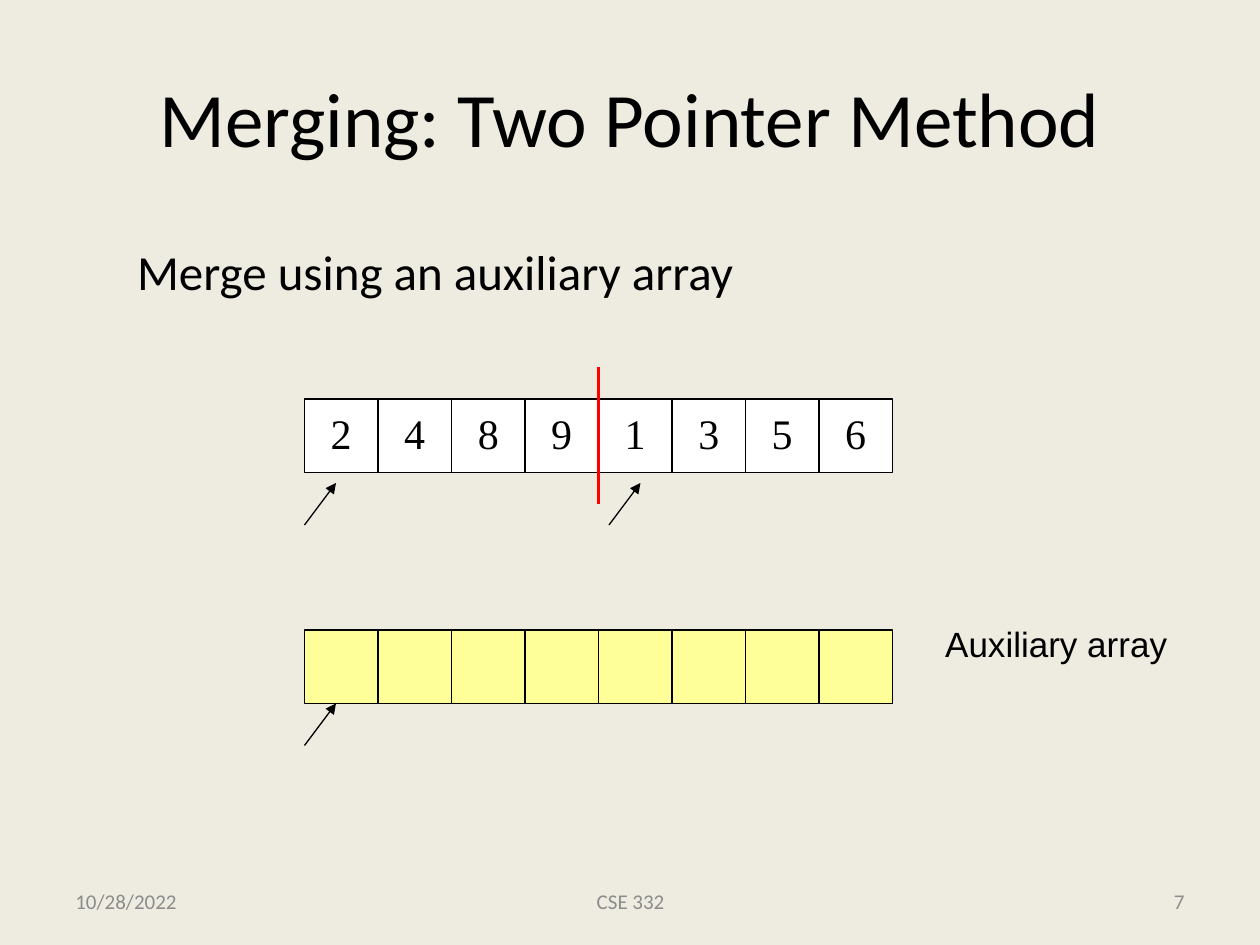
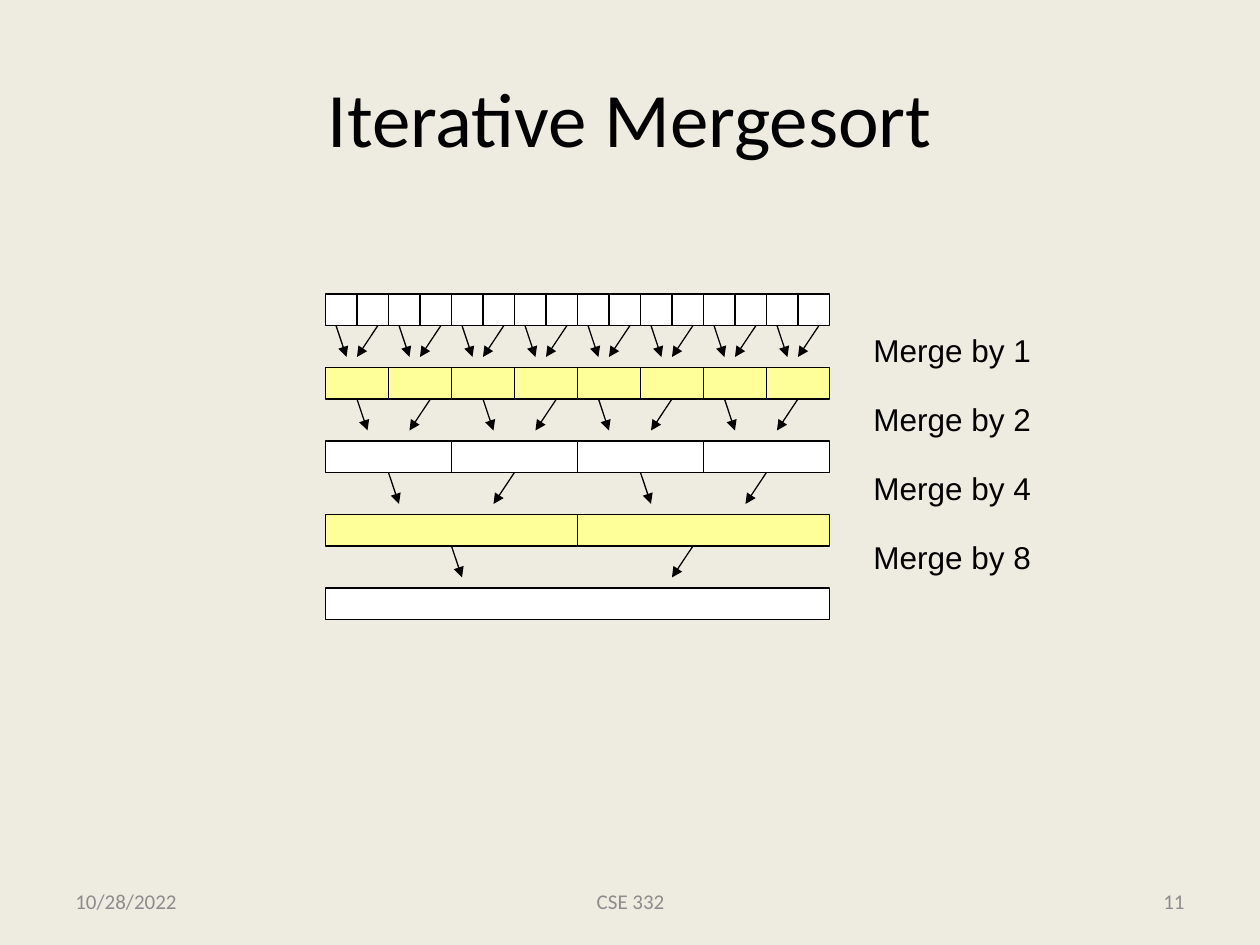
from lxml import etree
from pptx import Presentation
from pptx import util as u
from pptx.dml import color
from pptx.enum import shapes, text
from pptx.oxml import ns

PAPER = color.RGBColor(0xEE, 0xEC, 0xE1)
BLACK = color.RGBColor(0, 0, 0)
WHITE = color.RGBColor(0xFF, 0xFF, 0xFF)
YELLOW = color.RGBColor(0xFF, 0xFF, 0x99)
RED = color.RGBColor(0xFF, 0, 0)
GRAY = color.RGBColor(0x8C, 0x8C, 0x8C)
LEFT, MID, RIGHT = text.PP_ALIGN.LEFT, text.PP_ALIGN.CENTER, text.PP_ALIGN.RIGHT
UNIT = 1 / 12


def style(para, face, size, tint=BLACK, align=LEFT, pitch=None):
    """Set the font, alignment and line pitch of a paragraph."""
    para.font.name = face
    para.font.size = u.Pt(size)
    para.font.color.rgb = tint
    para.alignment = align
    para.line_spacing = pitch


def add_text(slide, box, lines, face, size, tint=BLACK, align=LEFT,
             pitch=None, gap=0, wrap=False, anchor=text.MSO_ANCHOR.TOP):
    """Add a text box with one paragraph for each line."""
    frame = slide.shapes.add_textbox(*map(u.Inches, box)).text_frame
    frame.word_wrap = wrap
    frame.vertical_anchor = anchor
    frame.text = "\n".join(lines)
    for i, para in enumerate(frame.paragraphs):
        style(para, face, size, tint, align, pitch)
        if i:
            para.space_before = u.Pt(gap)


def add_line(slide, start, end, tint=BLACK, width=0.75, head=True, cell=None):
    """Draw a line or arrow, joined to the cell if it starts at its lower middle."""
    ends = map(u.Inches, (*start, *end))
    line = slide.shapes.add_connector(shapes.MSO_CONNECTOR.STRAIGHT, *ends)
    if cell is not None:
        middle = cell.left + cell.width / 2
        if abs(middle - u.Inches(start[0])) < u.Inches(0.01):
            line.begin_connect(cell, 2)
    line.line.color.rgb = tint
    line.line.width = u.Pt(width)
    props = line.element.spPr
    if head:
        etree.SubElement(props.find(ns.qn("a:ln")), ns.qn("a:tailEnd"), type="triangle")
    etree.SubElement(props, ns.qn("a:effectLst"))


def add_row(slide, box, count, fill, labels=()):
    """Split a box into equal cells and return them."""
    left, top, width, height = box
    step = width / count
    cells = []
    for i in range(count):
        place = map(u.Inches, (left + i * step, top, step, height))
        cell = slide.shapes.add_shape(shapes.MSO_SHAPE.RECTANGLE, *place)
        cell.shadow.inherit = False
        cell.fill.solid()
        cell.fill.fore_color.rgb = fill
        cell.line.color.rgb = BLACK
        cell.line.width = u.Pt(0.75)
        cells.append(cell)
    for cell, label in zip(cells, labels):
        frame = cell.text_frame
        frame.word_wrap = False
        frame.vertical_anchor = text.MSO_ANCHOR.MIDDLE
        frame.text = label
        style(frame.paragraphs[0], "Times New Roman", 24, BLACK, MID, 0.9)
    return cells


def add_page(deck, title, number):
    """Add a slide with the shared title and footer."""
    slide = deck.slides.add_slide(deck.slide_layouts[5])
    head = slide.shapes.title
    head.left, head.top, head.width, head.height = map(u.Inches, (0.5, 0.3, 9, 1.25))
    head.text_frame.text = title
    head.text_frame.vertical_anchor = text.MSO_ANCHOR.MIDDLE
    style(head.text_frame.paragraphs[0], "Calibri", 44, BLACK, MID)
    footer = ((0.5, 2.33, "10/28/2022", LEFT), (3.42, 3.17, "CSE 332", MID),
              (7.17, 2.33, number, RIGHT))
    for left, width, words, align in footer:
        add_text(slide, (left, 6.95, width, 0.4), [words], "Calibri", 12, GRAY, align,
                 wrap=True, anchor=text.MSO_ANCHOR.MIDDLE)
    return slide


def add_source(slide, box, values):
    """Draw the two sorted halves, the bar between them and their pointers."""
    left, top, width, height = box
    add_row(slide, box, len(values), WHITE, values)
    center, base = left + width / 2, top + height
    add_line(slide, (center, top - 0.25), (center, base + 0.25), RED, 2.25, False)
    for x in (left, center + UNIT):
        add_line(slide, (x, base + 5 * UNIT), (x + 0.25, base + UNIT))


def add_target(slide, box, count):
    """Draw the empty array with its pointer and label."""
    left, top, width, height = box
    add_row(slide, box, count, YELLOW)
    base = top + height
    add_line(slide, (left, base + 4 * UNIT), (left + 0.25, base))
    add_text(slide, (left + width + 0.32, top - 0.07, 1.96, 0.43),
             ["Auxiliary array"], "Arial", 20, pitch=0.9)


def add_tree(slide, box):
    """Draw the merge levels, each with half the cells of the one above."""
    left, top, width, height = box
    cells = add_row(slide, (left, top, width, height), 16, WHITE)
    levels = ((YELLOW, 1, 5, 0), (WHITE, 3, 10, 1), (YELLOW, 6, 18, 0), (WHITE, 12, 35, 0))
    for fill, first, second, nudge in levels:
        base = top + height
        count = len(cells) // 2
        for i in range(count):
            shift = nudge if i >= count / 2 else 0
            origin = left + i * width / count - shift * UNIT
            pairs = ((first, 1, cells[2 * i]), (second, -2, cells[2 * i + 1]))
            for start, lean, cell in pairs:
                x = origin + start * UNIT
                add_line(slide, (x, base), (x + lean * UNIT, base + 0.25), cell=cell)
        top += 7 * UNIT
        cells = add_row(slide, (left, top, width, height), count, fill)
    steps = [f"Merge by {2 ** i}" for i in range(len(levels))]
    add_text(slide, (left + width + 0.25, box[1] + 0.28, 1.45, 2.2), steps,
             "Arial", 18, pitch=0.9, gap=20)


def main():
    """Build and save the deck."""
    deck = Presentation()
    deck.slide_width, deck.slide_height = u.Inches(10), u.Inches(7.5)
    paper = deck.slide_master.background.fill
    paper.solid()
    paper.fore_color.rgb = PAPER

    merge = add_page(deck, "Merging: Two Pointer Method", "7")
    add_text(merge, (0.99, 1.92, 5.58, 0.9), ["Merge using an auxiliary array"],
             "Calibri", 28, pitch=0.9, wrap=True)
    size = (56 * UNIT, 7 * UNIT)
    add_source(merge, (29 * UNIT, 38 * UNIT, *size), "24891356")
    add_target(merge, (29 * UNIT, 5, *size), 8)

    sort = add_page(deck, "Iterative Mergesort", "11")
    add_tree(sort, (31 * UNIT, 28 * UNIT, 4, 0.25))
    deck.save("out.pptx")


if __name__ == "__main__":
    main()
